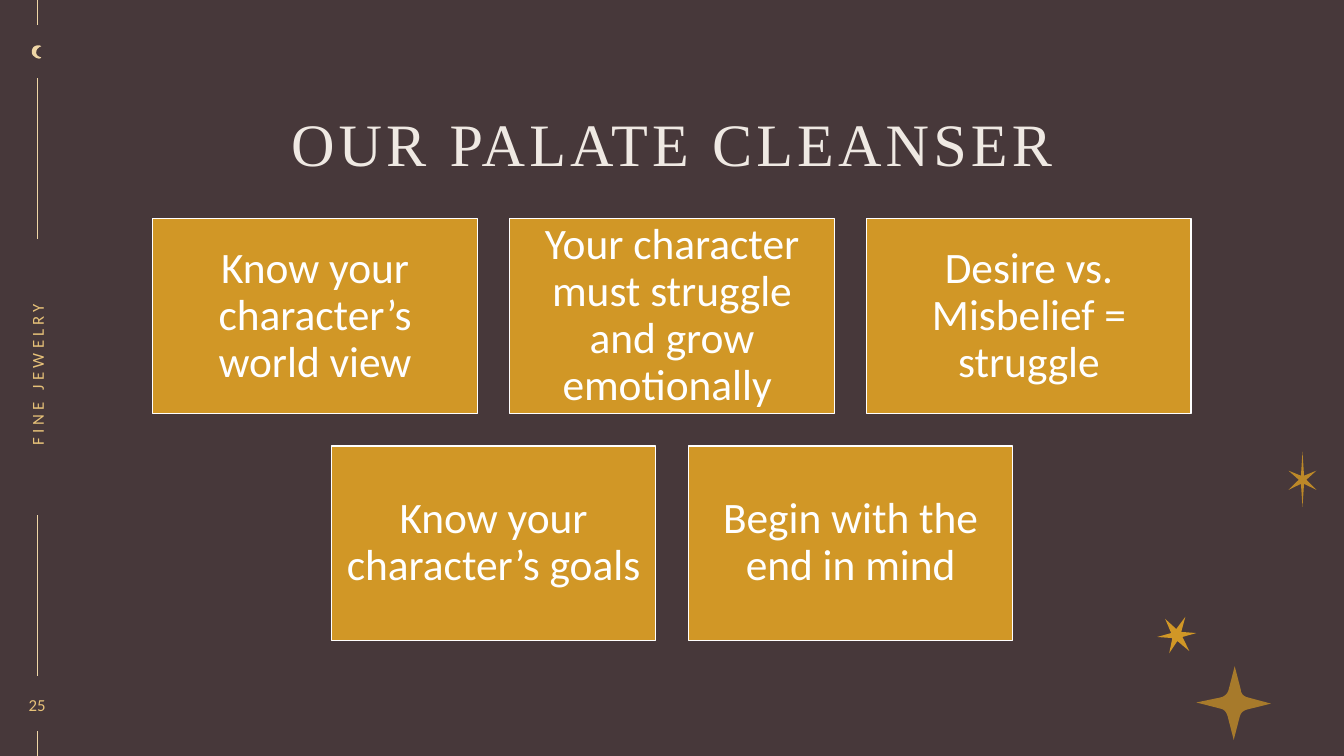
from lxml.etree import SubElement
from pptx import Presentation
from pptx.dml.color import RGBColor
from pptx.enum.shapes import MSO_CONNECTOR, MSO_SHAPE
from pptx.enum.text import MSO_ANCHOR, PP_ALIGN
from pptx.oxml.ns import qn
from pptx.util import Pt

GOLD, SAND, CREAM = "D19726", "EFD6A6", "E7C279"


def color(hex_string):
    return RGBColor.from_string(hex_string)


def write(shape, text, size, fill, font="Calibri", line_spacing=1.0, letter_spacing=0, inset=0):
    frame = shape.text_frame
    frame.word_wrap = True
    frame.vertical_anchor = MSO_ANCHOR.MIDDLE
    frame.margin_left = frame.margin_right = Pt(inset)
    frame.margin_top = frame.margin_bottom = Pt(inset)
    para = frame.paragraphs[0]
    para.alignment = PP_ALIGN.CENTER
    para.line_spacing = line_spacing
    span = para.add_run()
    span.text = text
    span.font.size = Pt(size)
    span.font.name = font
    span.font.color.rgb = color(fill)
    if letter_spacing:
        span._r.get_or_add_rPr().set("spc", str(letter_spacing * 100))


deck = Presentation()
deck.slide_width, deck.slide_height = Pt(960), Pt(540)
page = deck.slides.add_slide(deck.slide_layouts[6])
page.background.fill.solid()
page.background.fill.fore_color.rgb = color("47383A")

# Broken vertical line at the left edge
for top, bottom in [(0, 18), (56, 171), (368, 483), (522.5, 540)]:
    line = page.shapes.add_connector(MSO_CONNECTOR.STRAIGHT, Pt(26.6), Pt(top), Pt(26.6), Pt(bottom))
    line.line.color.rgb = color(SAND)
    line.line.width = Pt(0.75)
    SubElement(line._element.spPr, qn("a:effectLst"))

# Stars and moon: two numbers are a corner, six are a Bézier curve
tilted_star = [
    (843.8, 451.4), (846.7, 440.6), (840.2, 449.3), (832.3, 442.1), (836.6, 452.2), (826.6, 455),
    (837.4, 455.8), (835.2, 466.6), (841, 457.9), (849.6, 465.1), (844.6, 455), (854.6, 452.2),
]
large_star = [
    (886.3, 492.5), (882, 475.9), (877.7, 492.5), (877, 495.4, 874.8, 497.5, 871.9, 498.2),
    (854.6, 501.8), (871.9, 506.2), (874.8, 506.9, 876.2, 508.9, 877, 511.9),
    (881.3, 528.5), (885.6, 511.9), (886.3, 508.9, 888.5, 507.6, 890.6, 506.9),
    (907.9, 502.6), (891.4, 498.2), (888.5, 497.5, 886.3, 495.4, 886.3, 492.5),
]
tall_star = [
    (933.1, 342.7), (940.3, 336.2), (931.5, 339.8), (930.4, 322.6), (929.3, 339.8), (920.4, 336.2),
    (927.7, 342.7), (920.4, 349.9), (929.3, 345.6), (930.4, 362.2), (931.5, 345.6), (940.3, 349.9),
]
moon = [
    (29.5, 33.1), (27.4, 33.8, 25.9, 35.3, 25.9, 37.4), (25.9, 39.6, 27.4, 40.3, 29.5, 41),
    (28.8, 42.5, 25.9, 41.8, 24.5, 40.3), (22.3, 38.9, 22.3, 36, 23.8, 33.8),
    (25.2, 32.4, 28.1, 31.7, 29.5, 33.1),
]
CURVE_STEPS = 8
for outline, fill, opacity in [
    (tilted_star, GOLD, 100), (large_star, GOLD, 70), (tall_star, GOLD, 85), (moon, SAND, 100),
]:
    points = [outline[0]]
    for step in outline[1:]:
        if len(step) == 2:
            points.append(step)
            continue
        x0, y0 = points[-1]
        x1, y1, x2, y2, x3, y3 = step
        for i in range(1, CURVE_STEPS + 1):
            t = i / CURVE_STEPS
            a, b, c, d = (1 - t) ** 3, 3 * t * (1 - t) ** 2, 3 * t ** 2 * (1 - t), t ** 3
            points.append((a * x0 + b * x1 + c * x2 + d * x3, a * y0 + b * y1 + c * y2 + d * y3))
    corners = [(Pt(x), Pt(y)) for x, y in points]
    builder = page.shapes.build_freeform(*corners[0])
    builder.add_line_segments(corners[1:], close=True)
    ornament = builder.convert_to_shape()
    ornament.shadow.inherit = False
    ornament.line.fill.background()
    ornament.fill.solid()
    ornament.fill.fore_color.rgb = color(fill)
    if opacity < 100:
        tint = ornament._element.spPr.find(qn("a:solidFill"))[0]
        SubElement(tint, qn("a:alpha")).set("val", str(opacity * 1000))

# Title
title = page.shapes.add_textbox(Pt(84), Pt(78), Pt(792), Pt(54))
write(title, "OUR PALATE CLEANSER", 43, "EFE9E3", font="Times New Roman",
      line_spacing=0.9, letter_spacing=3)

# Cards, each row centred on the page
CARD_WIDTH, CARD_HEIGHT, GAP = 231.8, 139.1, 23.2
card_rows = [
    ["Know your character’s world view", "Your character must struggle and grow emotionally ",
     "Desire vs. Misbelief = struggle"],
    ["Know your character’s goals ", "Begin with the end in mind"],
]
for row, texts in enumerate(card_rows):
    left = (960 - len(texts) * (CARD_WIDTH + GAP) + GAP) / 2
    top = 156.2 + row * (CARD_HEIGHT + GAP)
    for column, text in enumerate(texts):
        card = page.shapes.add_shape(MSO_SHAPE.RECTANGLE, Pt(left + column * (CARD_WIDTH + GAP)),
                                     Pt(top), Pt(CARD_WIDTH), Pt(CARD_HEIGHT))
        card.shadow.inherit = False
        card.fill.solid()
        card.fill.fore_color.rgb = color(GOLD)
        card.line.color.rgb = color("FFFFFF")
        card.line.width = Pt(1)
        write(card, text, 31, "FFFFFF", line_spacing=0.9, inset=9.3)

# Page number and rotated footer
number = page.shapes.add_textbox(Pt(12.2), Pt(496), Pt(28.8), Pt(14.4))
write(number, "25", 12, CREAM)
footer = page.shapes.add_textbox(Pt(-74.2), Pt(260.6), Pt(201.6), Pt(14.4))
footer.rotation = 270
write(footer, "FINE JEWELRY", 12, CREAM, letter_spacing=3)

deck.save("out.pptx")
